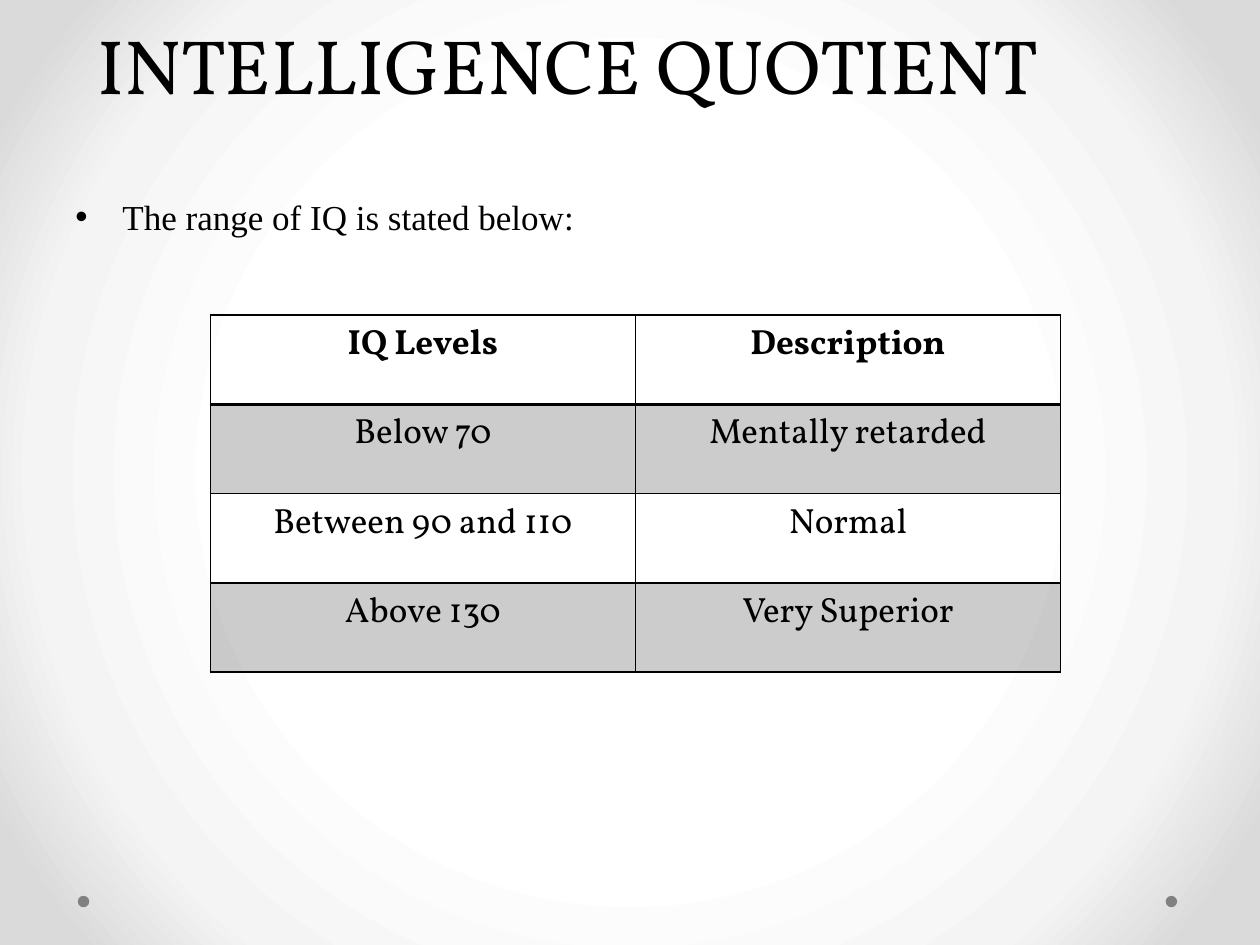
from lxml.etree import SubElement
from pptx import Presentation
from pptx.dml.color import RGBColor
from pptx.enum.shapes import MSO_SHAPE
from pptx.enum.text import MSO_ANCHOR, PP_ALIGN
from pptx.oxml import parse_xml
from pptx.oxml.ns import nsdecls, qn
from pptx.util import Cm, Pt


def color(code):
    return RGBColor.from_string(code)


def write(frame, text, size, face="Vollkorn", bold=False, align=PP_ALIGN.CENTER):
    para = frame.paragraphs[0]
    para.alignment = align
    run = para.add_run()
    run.text = text
    style = {"size": Pt(size), "name": face, "bold": bold}
    for key, value in style.items():
        setattr(run.font, key, value)
    run.font.color.rgb = color("000000")
    return para


deck = Presentation()
deck.slide_width, deck.slide_height = Cm(25.4), Cm(19.05)
slide = deck.slides.add_slide(deck.slide_layouts[6])
shapes = slide.shapes

# Radial background
fill = slide.background.fill
fill.gradient()
stops = "".join(
    f'<a:gs pos="{pos}000"><a:srgbClr val="{code}"/></a:gs>'
    for pos, code in ((50, "FFFFFF"), (76, "F4F4F4"), (92, "DADADA"))
)
glow = parse_xml(
    f'<a:gradFill {nsdecls("a")} rotWithShape="1"><a:gsLst>{stops}</a:gsLst>'
    '<a:path path="circle"><a:fillToRect l="50000" t="50000" r="50000" b="50000"/>'
    "</a:path></a:gradFill>"
)
old = next(slide.element.iter(qn("a:gradFill")))
old.getparent().replace(old, glow)

# Footer dots
for left in (23.5, 1.57):
    dot = shapes.add_shape(MSO_SHAPE.OVAL, Cm(left), Cm(18.06), Cm(0.23), Cm(0.23))
    dot.shadow.inherit = False
    dot.fill.solid()
    dot.fill.fore_color.rgb = color("808080")
    dot.line.fill.background()

# Title
title = shapes.add_textbox(Cm(0.03), Cm(0), Cm(22.86), Cm(2.34)).text_frame
title.word_wrap = True
title.vertical_anchor = MSO_ANCHOR.BOTTOM
write(title, "INTELLIGENCE QUOTIENT", 44).line_spacing = Pt(58)

# Bulleted lead-in
body = shapes.add_textbox(Cm(1.27), Cm(3.81), Cm(24.13), Cm(9.09)).text_frame
body.word_wrap = True
lead = write(body, "The range of IQ is stated below:", 20, "Times New Roman",
             align=PP_ALIGN.LEFT)
lead.space_before = Pt(4)
props = lead._p.get_or_add_pPr()
props.set("marL", str(Cm(0.95)))
props.set("indent", str(Cm(-0.95)))
SubElement(props, qn("a:buFont"), typeface="Arial")
SubElement(props, qn("a:buChar"), char="•")

# IQ table
rows = (
    ("IQ Levels", "Description"),
    ("Below 70", "Mentally retarded"),
    ("Between 90 and 110", "Normal"),
    ("Above 130", "Very Superior"),
)
table = shapes.add_table(4, 2, Cm(4.24), Cm(6.35), Cm(17.14), Cm(7.2)).table
table.first_row = table.horz_banding = False
for r, row in enumerate(rows):
    for c, text in enumerate(row):
        cell = table.cell(r, c)
        write(cell.text_frame, text, 20, bold=r == 0)
        props = cell._tc.get_or_add_tcPr()
        for side in "LRTB":
            thick = (r, side) in ((0, "B"), (1, "T"))
            edge = SubElement(props, qn(f"a:ln{side}"), w=str(Pt(2 if thick else 1)))
            paint = SubElement(edge, qn("a:solidFill"))
            SubElement(paint, qn("a:srgbClr"), val="000000")
        if r % 2:
            cell.fill.solid()
            cell.fill.fore_color.rgb = color("000000")
            shade = props.find(qn("a:solidFill")).find(qn("a:srgbClr"))
            SubElement(shade, qn("a:alpha"), val="20000")
        else:
            cell.fill.background()

deck.save("out.pptx")
